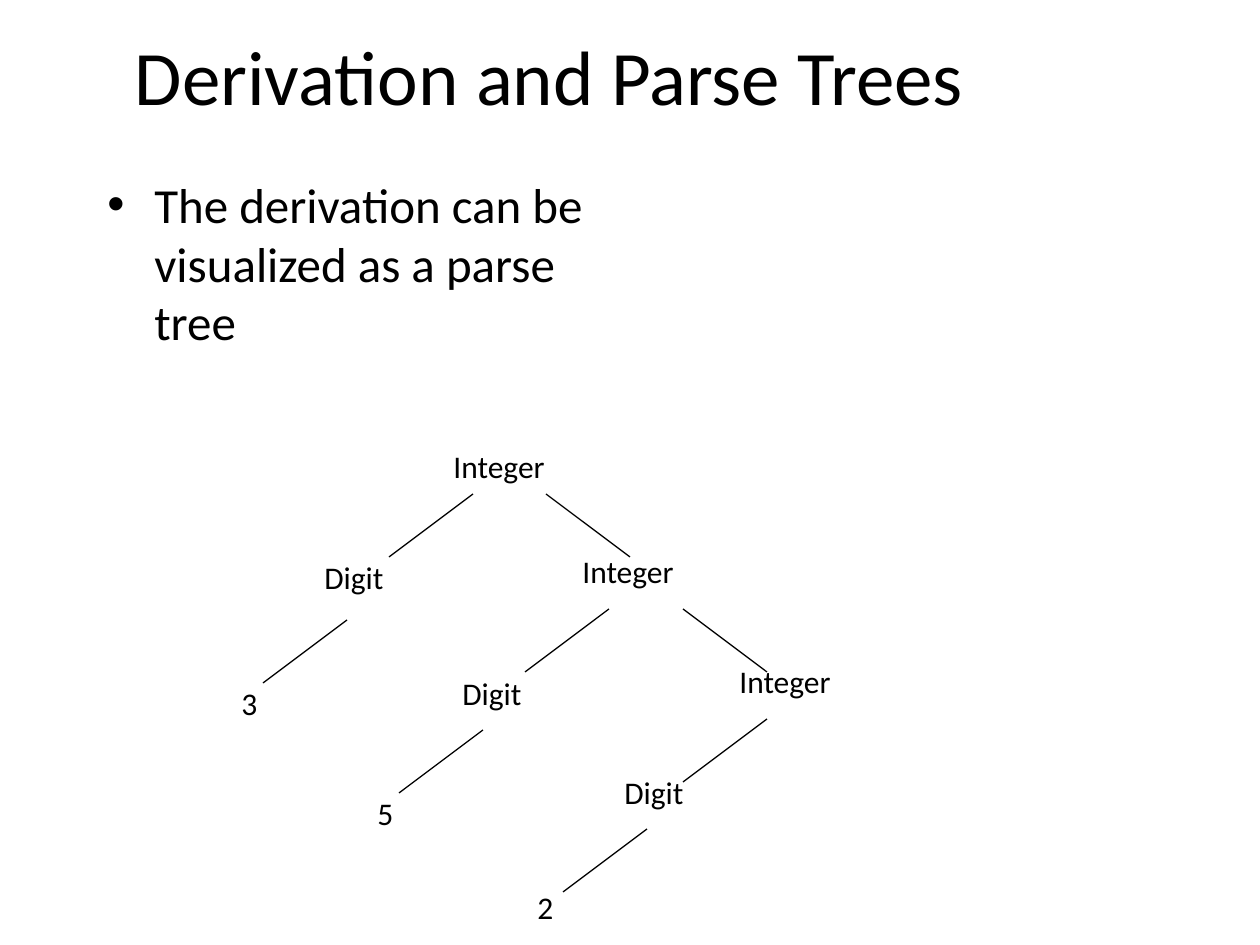
from lxml import etree
from pptx import Presentation
from pptx.dml.color import RGBColor
from pptx.enum.shapes import MSO_CONNECTOR
from pptx.enum.text import MSO_ANCHOR, MSO_AUTO_SIZE, PP_ALIGN
from pptx.oxml.ns import qn
from pptx.util import Emu, Pt

STRAIGHT = MSO_CONNECTOR.STRAIGHT
MIDDLE = MSO_ANCHOR.MIDDLE
GROW = MSO_AUTO_SIZE.SHAPE_TO_FIT_TEXT
CENTER = PP_ALIGN.CENTER
BLACK = RGBColor(0x00, 0x00, 0x00)
WHITE = RGBColor(0xFF, 0xFF, 0xFF)

EMU_PER_PX = 914400 / 126
PAGE_WIDTH, PAGE_HEIGHT = 1260, 945
NODE_HEIGHT = 63
NODE_WIDTHS = {"Integer": 144, "Digit": 112}
LEAF_WIDTH = 47
BRANCH_WIDTH, BRANCH_HEIGHT = 84, 63
LEFT, RIGHT = -1, 1

NODES = [
    ("Integer", 441, 441),
    ("Digit", 312, 552),
    ("3", 229, 678),
    ("Integer", 570, 546),
    ("Digit", 450, 668),
    ("5", 365, 788),
    ("Integer", 727, 656),
    ("Digit", 612, 767),
    ("2", 525, 882),
]
BRANCHES = [
    (473, 494, LEFT),
    (546, 494, RIGHT),
    (347, 620, LEFT),
    (609, 609, LEFT),
    (683, 609, RIGHT),
    (483, 730, LEFT),
    (767, 719, LEFT),
    (647, 829, LEFT),
]


def px(length):
    return Emu(round(length * EMU_PER_PX))


def apply_format(target, values):
    for name, value in values.items():
        setattr(target, name, value)


class TreePage:
    font_name = "Calibri"
    line_width = Pt(0.75)

    def __init__(self, deck):
        self.page = deck.slides.add_slide(deck.slide_layouts[6])
        fill = self.page.background.fill
        fill.solid()
        fill.fore_color.rgb = WHITE

    def text(self, wording, bounds, size, frame_format, para_format=None):
        box = self.page.shapes.add_textbox(*map(px, bounds))
        apply_format(box.text_frame, frame_format)
        para = box.text_frame.paragraphs[0]
        apply_format(para, para_format or {})
        span = para.add_run()
        span.text = wording
        apply_format(span.font, {"name": self.font_name, "size": Pt(size)})
        span.font.color.rgb = BLACK
        return para

    def title(self, wording, bounds):
        self.text(wording, bounds, 44,
                  {"word_wrap": True, "vertical_anchor": MIDDLE},
                  {"alignment": CENTER})

    def bullet(self, wording, bounds, indent):
        para = self.text(wording, bounds, 28, {"word_wrap": True})
        properties = para._p.get_or_add_pPr()
        properties.set("marL", str(px(indent)))
        properties.set("indent", str(-px(indent)))
        etree.SubElement(properties, qn("a:buFont")).set("typeface", "Arial")
        etree.SubElement(properties, qn("a:buChar")).set("char", "•")

    def node(self, label, left, top):
        width = NODE_WIDTHS.get(label, LEAF_WIDTH)
        self.text(label, (left, top, width, NODE_HEIGHT), 18,
                  {"word_wrap": False, "auto_size": GROW})

    def branch(self, x, y, direction):
        ends = (x, y, x + direction * BRANCH_WIDTH, y + BRANCH_HEIGHT)
        connector = self.page.shapes.add_connector(STRAIGHT, *map(px, ends))
        connector.line.width = self.line_width
        connector.line.color.rgb = BLACK
        etree.SubElement(connector._element.spPr, qn("a:effectLst"))


def main():
    deck = Presentation()
    apply_format(deck, {"slide_width": px(PAGE_WIDTH),
                        "slide_height": px(PAGE_HEIGHT)})
    page = TreePage(deck)
    page.title("Derivation and Parse Trees", (14, 14, 1071, 122))
    page.bullet("The derivation can be visualized as a parse tree",
                (95, 168, 525, 683), 47)
    for node in NODES:
        page.node(*node)
    for branch in BRANCHES:
        page.branch(*branch)
    deck.save("out.pptx")


if __name__ == "__main__":
    main()
